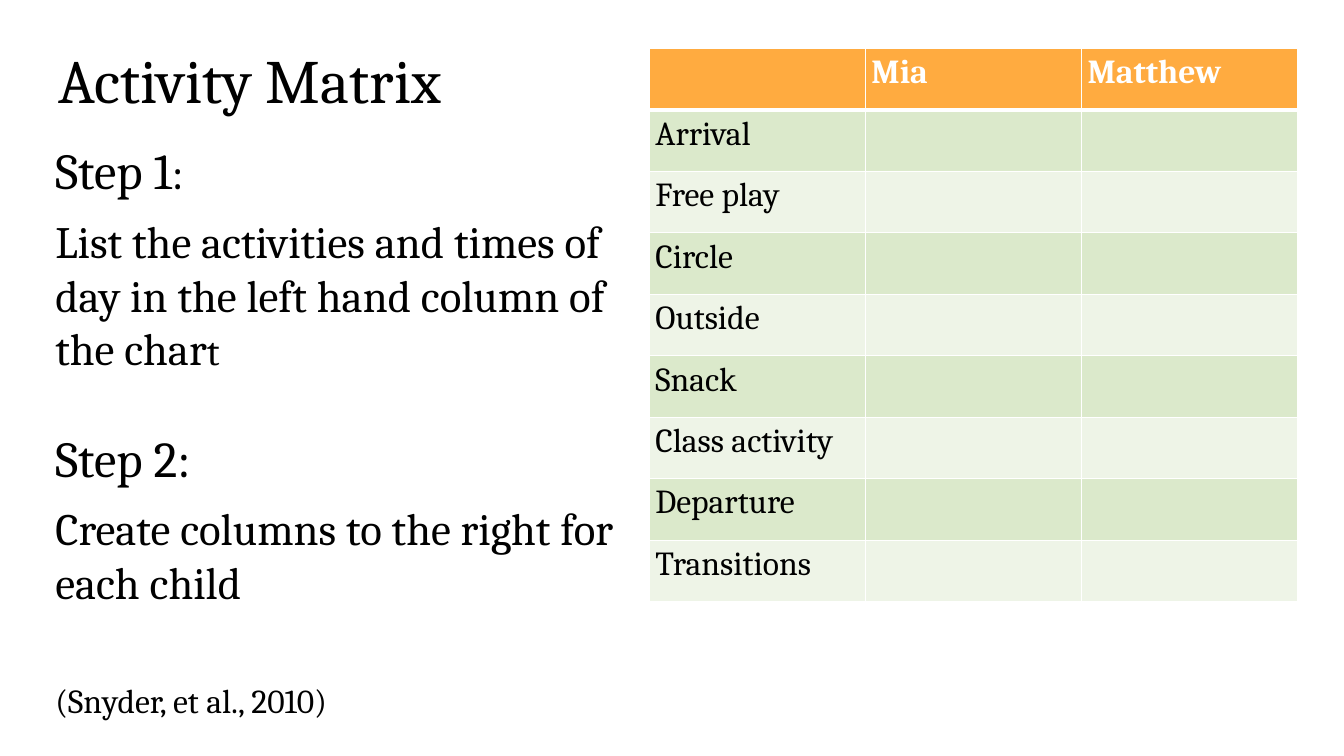
from lxml import etree
from pptx import Presentation
from pptx.dml.color import RGBColor
from pptx.enum import text
from pptx.oxml import ns
from pptx.util import Inches, Pt

FONT = "Cambria"
COLORS = {"ink": "000000", "white": "FFFFFF", "header": "FFAB40",
          "odd": "DBE9CB", "even": "EEF4E7"}
CHILDREN = ["Mia", "Matthew"]
ACTIVITIES = ["Arrival", "Free play", "Circle", "Outside", "Snack",
              "Class activity", "Departure", "Transitions"]
# Each paragraph: space before in points, then its runs as (text, size)
STEPS = [
    (0, [("Step 1", 36), (":", 32)]),
    (10, [("List the activities and times of day in the left hand column of the char", 32),
          ("t", 28)]),
    (37, [("Step 2:", 36)]),
    (10, [("Create columns to the right for each child", 32)]),
]


def rgb(name):
    return RGBColor.from_string(COLORS[name])


def add_run(p, words, size, color="ink", bold=False):
    r = p.add_run()
    r.text = words
    r.font.name = FONT
    r.font.size = Pt(size)
    r.font.bold = bold
    r.font.color.rgb = rgb(color)


def set_frame(tf, anchor, x_inset=0.1, y_inset=0.05):
    tf.word_wrap = True
    tf.auto_size = text.MSO_AUTO_SIZE.NONE
    tf.vertical_anchor = anchor
    tf.margin_left = tf.margin_right = Inches(x_inset)
    tf.margin_top = tf.margin_bottom = Inches(y_inset)


def set_title(s, words):
    title = s.shapes.title
    title.left, title.top = Inches(0.45), Inches(0.29)
    title.width, title.height = Inches(4.59), Inches(0.83)
    set_frame(title.text_frame, text.MSO_ANCHOR.TOP, 0.13, 0.13)
    p = title.text_frame.paragraphs[0]
    p.alignment = text.PP_ALIGN.LEFT
    add_run(p, words, 44)


def add_text(s, left, top, width, height, paragraphs, anchor=text.MSO_ANCHOR.TOP):
    sp = s.shapes.add_textbox(Inches(left), Inches(top), Inches(width), Inches(height))
    tf = sp.text_frame
    set_frame(tf, anchor)
    for i, (space, runs) in enumerate(paragraphs):
        p = tf.add_paragraph() if i else tf.paragraphs[0]
        if space:
            p.space_before = Pt(space)
        for words, size in runs:
            add_run(p, words, size)


def set_borders(cell, top=1, bottom=1):
    """Draw white cell edges, with the widths in points."""
    tc_pr = cell._tc.get_or_add_tcPr()
    edges = [("lnL", 1), ("lnR", 1), ("lnT", top), ("lnB", bottom)]
    for i, (tag, width) in enumerate(edges):
        ln = etree.Element(ns.qn(f"a:{tag}"), w=str(Pt(width)))
        fill = etree.SubElement(ln, ns.qn("a:solidFill"))
        etree.SubElement(fill, ns.qn("a:srgbClr"), val=COLORS["white"])
        tc_pr.insert(i, ln)


def add_matrix(s):
    rows = [["", *CHILDREN]] + [[name] + [""] * len(CHILDREN) for name in ACTIVITIES]
    table = s.shapes.add_table(len(rows), len(rows[0]), Inches(6.44), Inches(0.48),
                               Inches(6.43), Inches(0.61 * len(rows))).table
    for i, row in enumerate(rows):
        header = i == 0
        band = "header" if header else "odd" if i % 2 else "even"
        for j, words in enumerate(row):
            cell = table.cell(i, j)
            cell.margin_left = cell.margin_right = Inches(0.06)
            cell.fill.solid()
            cell.fill.fore_color.rgb = rgb(band)
            set_borders(cell, top=3 if i == 1 else 1, bottom=3 if header else 1)
            if words:
                add_run(cell.text_frame.paragraphs[0], words, 24,
                        "white" if header else "ink", header)


def main():
    prs = Presentation()
    prs.slide_width, prs.slide_height = Inches(13.33), Inches(7.5)
    s = prs.slides.add_slide(prs.slide_layouts[5])
    set_title(s, "Activity Matrix")
    add_text(s, 0.45, 1.33, 5.83, 5.12, STEPS)
    add_matrix(s)
    add_text(s, 0.45, 6.53, 11.56, 0.84, [(0, [("(Snyder, et al., 2010)", 24)])],
             text.MSO_ANCHOR.MIDDLE)
    prs.save("out.pptx")


if __name__ == "__main__":
    main()
